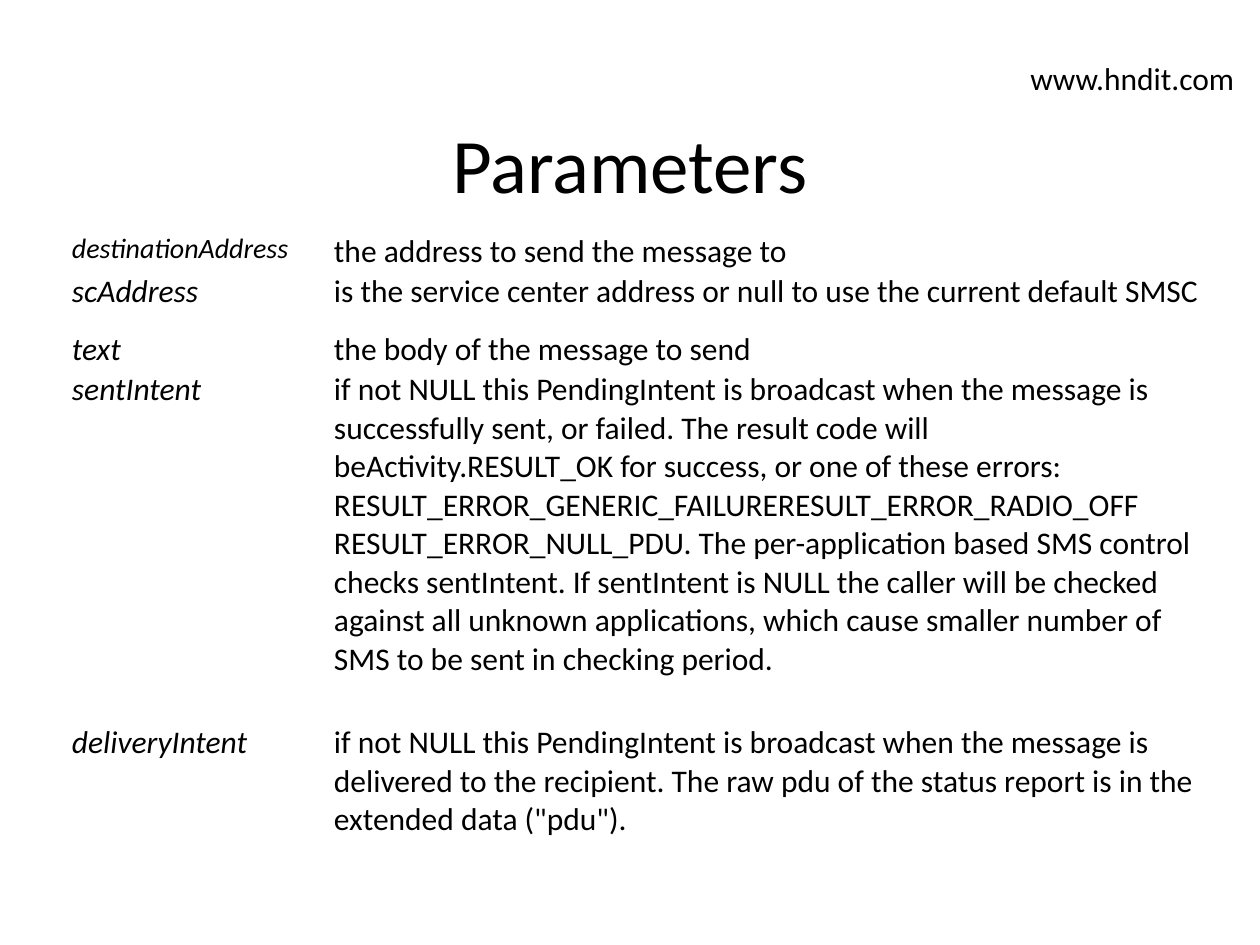
import dataclasses

import pptx
import pptx.dml.color
import pptx.enum.text
import pptx.util


@dataclasses.dataclass(frozen=True)
class Theme:
    font: str = "Calibri"
    ink: str = "000000"
    paper: str = "FFFFFF"
    title_size: int = 44
    body_size: int = 18
    long_name_size: int = 16


THEME = Theme()
PX_PER_INCH = 126

COLUMN_WIDTHS = [262, 892]
ROW_HEIGHTS = [30, 58, 30, 353, 111]
PARAMETERS = [
    ("destinationAddress", "the address to send the message to"),
    ("scAddress", "is the service center address or null to use the current default SMSC"),
    ("text", "the body of the message to send"),
    ("sentIntent",
     "if not NULL this PendingIntent is broadcast when the message is successfully sent, "
     "or failed. The result code will beActivity.RESULT_OK for success, or one of these "
     "errors: RESULT_ERROR_GENERIC_FAILURERESULT_ERROR_RADIO_OFF RESULT_ERROR_NULL_PDU. "
     "The per-application based SMS control checks sentIntent. If sentIntent is NULL the "
     "caller will be checked against all unknown applications, which cause smaller number "
     "of SMS to be sent in checking period."),
    ("deliveryIntent",
     "if not NULL this PendingIntent is broadcast when the message is delivered to the "
     "recipient. The raw pdu of the status report is in the extended data (\"pdu\")."),
]


def px(length):
    return pptx.util.Emu(round(length * 914400 / PX_PER_INCH))


def color(value):
    return pptx.dml.color.RGBColor.from_string(value)


def write_text(frame, text, size=THEME.body_size, italic=False,
               align=pptx.enum.text.PP_ALIGN.LEFT):
    paragraph = frame.paragraphs[0]
    paragraph.alignment = align
    run = paragraph.add_run()
    run.text = text
    run.font.name = THEME.font
    run.font.size = pptx.util.Pt(size)
    run.font.italic = italic
    run.font.color.rgb = color(THEME.ink)


def place_title(slide, text, left, top, width, height):
    title = slide.shapes.title
    title.left, title.top = px(left), px(top)
    title.width, title.height = px(width), px(height)
    title.text_frame.vertical_anchor = pptx.enum.text.MSO_ANCHOR.MIDDLE
    write_text(title.text_frame, text, size=THEME.title_size,
               align=pptx.enum.text.PP_ALIGN.CENTER)


def add_site_address(slide, text, left, top, width, height):
    address = slide.shapes.add_textbox(px(left), px(top), px(width), px(height))
    address.text_frame.word_wrap = False
    address.text_frame.auto_size = pptx.enum.text.MSO_AUTO_SIZE.SHAPE_TO_FIT_TEXT
    write_text(address.text_frame, text)


def fill_cell(cell, text, **text_format):
    cell.margin_left = cell.margin_right = px(9)
    cell.margin_top = cell.margin_bottom = px(1)
    cell.fill.solid()
    cell.fill.fore_color.rgb = color(THEME.paper)
    write_text(cell.text_frame, text, **text_format)


def add_parameter_table(slide, left, top):
    parameters = slide.shapes.add_table(
        len(PARAMETERS), len(COLUMN_WIDTHS), px(left), px(top),
        px(sum(COLUMN_WIDTHS)), px(sum(ROW_HEIGHTS))).table
    parameters.first_row = False
    parameters.horz_banding = False
    for column, width in zip(parameters.columns, COLUMN_WIDTHS):
        column.width = px(width)
    for row, height, (name, meaning) in zip(parameters.rows, ROW_HEIGHTS, PARAMETERS):
        row.height = px(height)
        name_size = THEME.long_name_size if len(name) > 15 else THEME.body_size
        fill_cell(row.cells[0], name, size=name_size, italic=True)
        fill_cell(row.cells[1], meaning)


def main():
    deck = pptx.Presentation()
    deck.slide_width, deck.slide_height = px(1260), px(945)
    slide = deck.slides.add_slide(deck.slide_layouts.get_by_name("Title Only"))
    place_title(slide, "Parameters", 63, 84, 1134, 158)
    add_parameter_table(slide, 63, 231)
    add_site_address(slide, "www.hndit.com", 1018, 53, 229, 50)
    deck.save("out.pptx")


if __name__ == "__main__":
    main()
